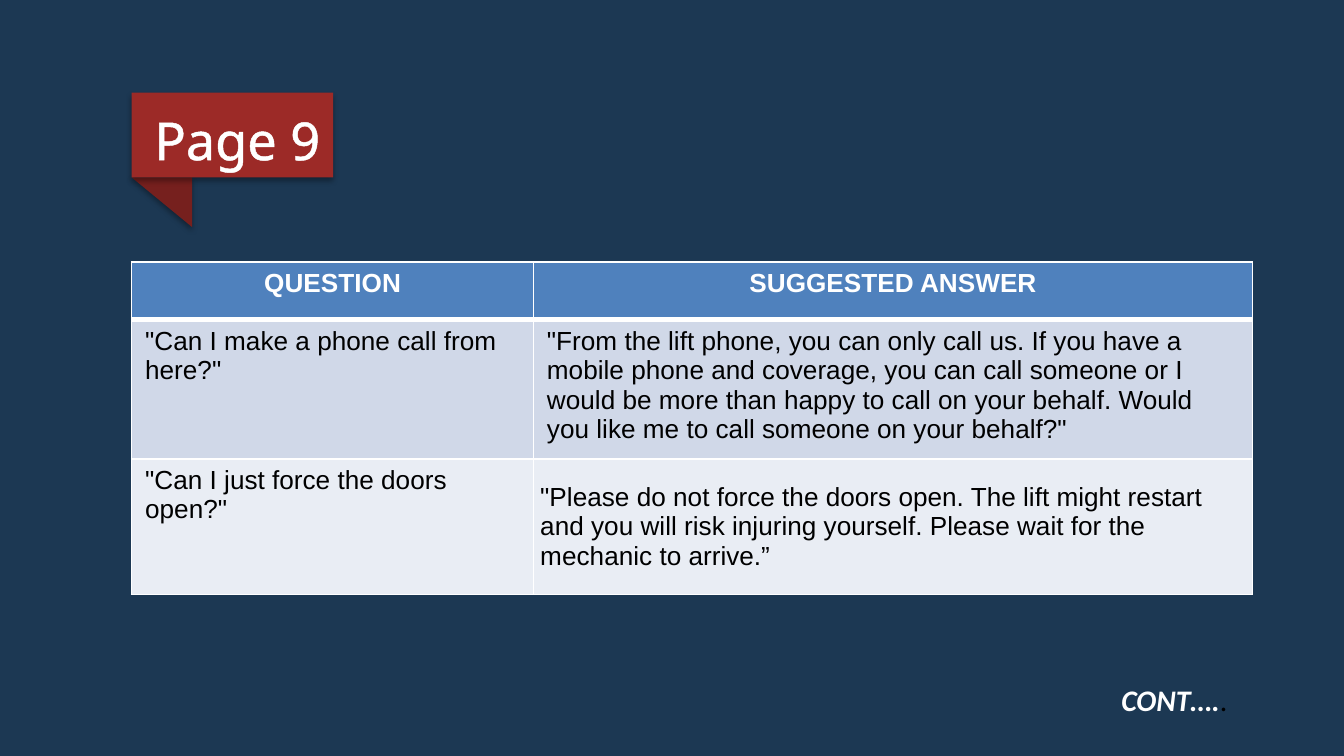
from pptx import Presentation
from pptx.dml.color import RGBColor
from pptx.enum.shapes import MSO_SHAPE
from pptx.enum.text import MSO_ANCHOR, MSO_AUTO_SIZE, PP_ALIGN
from pptx.oxml import parse_xml
from pptx.oxml.ns import nsdecls
from pptx.util import Inches, Pt

RECTANGLE, TRIANGLE = MSO_SHAPE.RECTANGLE, MSO_SHAPE.RIGHT_TRIANGLE
CENTER, LEFT, RIGHT = PP_ALIGN.CENTER, PP_ALIGN.LEFT, PP_ALIGN.RIGHT
MIDDLE = MSO_ANCHOR.MIDDLE
FIT_SHAPE = MSO_AUTO_SIZE.SHAPE_TO_FIT_TEXT

NAVY = RGBColor(0x1C, 0x38, 0x53)
RED = RGBColor(0x9C, 0x2A, 0x27)
DARK_RED = RGBColor(0x76, 0x20, 0x1E)
BLUE = RGBColor(0x4F, 0x81, 0xBD)
LIGHT_BLUE = RGBColor(0xD0, 0xD8, 0xE8)
PALE_BLUE = RGBColor(0xE9, 0xED, 0xF4)
WHITE = RGBColor(0xFF, 0xFF, 0xFF)
BLACK = RGBColor(0, 0, 0)

PAGE_LABEL = "Page 9"
CONTINUED = [("CONT….", WHITE, True), (".", BLACK, False)]
ROWS = [
    ("QUESTION", "SUGGESTED ANSWER"),
    ('"Can I make a phone call from here?"',
     '"From the lift phone, you can only call us. If you have a mobile phone '
     'and coverage, you can call someone or I would be more than happy to call '
     'on your behalf. Would you like me to call someone on your behalf?"'),
    ('"Can I just force the doors open?"',
     '"Please do not force the doors open. The lift might restart and you will '
     'risk injuring yourself. Please wait for the mechanic to arrive.”'),
]
ROW_FILLS = [BLUE, LIGHT_BLUE, PALE_BLUE]
ROW_HEIGHTS = [0.43, 1.01, 1.01]
COLUMN_WIDTHS = [2.99, 5.35]
MARGIN_LEFT = 0.98


def format_run(run, font, size, color, bold=False, italic=False):
    run.font.name = font
    run.font.size = Pt(size)
    run.font.color.rgb = color
    run.font.bold = bold
    run.font.italic = italic


def line_xml(tag, width):
    return parse_xml(
        f'<a:{tag} {nsdecls("a")} w="{Pt(width)}"><a:solidFill>'
        f'<a:srgbClr val="{WHITE}"/></a:solidFill></a:{tag}>')


def add_ribbon_part(shapes, kind, box, color, rotation=0):
    shape = shapes.add_shape(kind, *map(Inches, box))
    shape.rotation = rotation
    shape.fill.solid()
    shape.fill.fore_color.rgb = color
    shape.line.fill.background()
    shape.shadow.inherit = False
    effects = shape._element.spPr.find("{*}effectLst")
    effects.append(parse_xml(
        f'<a:outerShdw {nsdecls("a")} blurRad="{Pt(3.1)}" dist="{Pt(1.8)}" '
        'dir="5400000" rotWithShape="0"><a:srgbClr val="000000">'
        '<a:alpha val="35000"/></a:srgbClr></a:outerShdw>'))


def add_text_box(slide, box):
    """Add a wrapping text box and return its first paragraph."""
    frame = slide.shapes.add_textbox(*map(Inches, box)).text_frame
    frame.word_wrap = True
    frame.auto_size = FIT_SHAPE
    return frame.paragraphs[0]


def set_borders(cell, top, bottom):
    properties = cell._tc.get_or_add_tcPr()
    widths = {"lnL": 1, "lnR": 1, "lnT": top, "lnB": bottom}
    for index, (tag, width) in enumerate(widths.items()):
        properties.insert(index, line_xml(tag, width))


def add_answer_table(slide):
    table = slide.shapes.add_table(
        len(ROWS), len(COLUMN_WIDTHS), Inches(MARGIN_LEFT), Inches(1.95),
        Inches(sum(COLUMN_WIDTHS)), Inches(sum(ROW_HEIGHTS))).table
    for column, width in zip(table.columns, COLUMN_WIDTHS):
        column.width = Inches(width)
    for r, texts in enumerate(ROWS):
        header = r == 0
        table.rows[r].height = Inches(ROW_HEIGHTS[r])
        for c, text in enumerate(texts):
            cell = table.cell(r, c)
            cell.text_frame.text = text
            paragraph = cell.text_frame.paragraphs[0]
            paragraph.alignment = CENTER if header else LEFT
            format_run(paragraph.runs[0], "Arial", 14,
                       WHITE if header else BLACK, bold=header)
            cell.fill.solid()
            cell.fill.fore_color.rgb = ROW_FILLS[r]
            set_borders(cell, top=3 if r == 1 else 1, bottom=3 if header else 1)
    last_answer = table.cell(len(ROWS) - 1, 1)
    last_answer.vertical_anchor = MIDDLE
    for side in ("left", "right", "top", "bottom"):
        setattr(last_answer, f"margin_{side}", Inches(0.05))


def main():
    presentation = Presentation()
    presentation.slide_width = Inches(10)
    presentation.slide_height = Inches(10 * 9 / 16)
    slide = presentation.slides.add_slide(presentation.slide_layouts[6])
    slide.background.fill.solid()
    slide.background.fill.fore_color.rgb = NAVY

    ribbon = slide.shapes.add_group_shape().shapes
    add_ribbon_part(ribbon, TRIANGLE, (MARGIN_LEFT, 1.32, 0.45, 0.37), DARK_RED, 180)
    add_ribbon_part(ribbon, RECTANGLE, (MARGIN_LEFT, 0.69, 1.5, 0.63), RED)

    label = add_text_box(slide, (1.05, 0.52, 3.88, 0.77))
    label.text = PAGE_LABEL
    label.line_spacing = 1.5
    format_run(label.runs[0], "Noto Sans", 28, WHITE)
    label.runs[0].font._element.insert(0, line_xml("ln", 1))

    add_answer_table(slide)

    footer = add_text_box(slide, (MARGIN_LEFT, 5.02, 8.25, 0.37))
    footer.alignment = RIGHT
    for text, color, emphasis in CONTINUED:
        run = footer.add_run()
        run.text = text
        format_run(run, "Calibri", 16, color, emphasis, emphasis)

    presentation.save("out.pptx")


if __name__ == "__main__":
    main()
